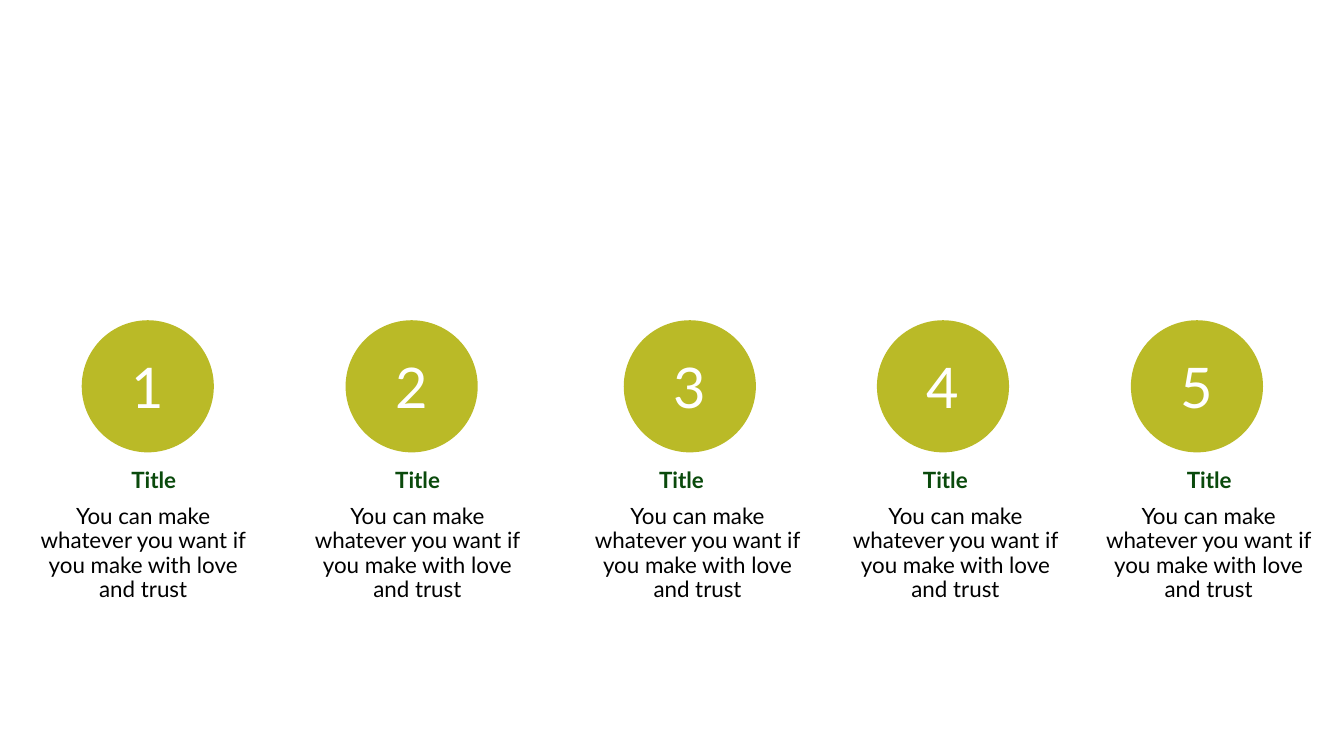
from pptx import Presentation
from pptx.dml.color import RGBColor
from pptx.enum.shapes import MSO_SHAPE as Shape
from pptx.enum.text import MSO_ANCHOR as Anchor, MSO_AUTO_SIZE as AutoSize, PP_ALIGN as Align
from pptx.util import Cm, Pt

OLIVE = RGBColor(0xBA, 0xBA, 0x27)
GREEN = RGBColor(0x0A, 0x4A, 0x0C)
BLACK = RGBColor(0, 0, 0)
WHITE = RGBColor(0xFF, 0xFF, 0xFF)
FONT = "Lato"
BODY = "You can make whatever you want if you make with love and trust"

# Left edges of each step in cm: circle, body text
STEPS = [(2.06, 0.76), (8.71, 7.67), (15.72, 14.73), (22.1, 21.23), (28.5, 27.61)]
TITLE_LEFT, TITLE_PITCH = 0.61, 6.65
ROW_TOP = 8.07


def write(shape, text, size, color, bold=False):
    """Put one centred paragraph into a shape and return it."""
    shape.text_frame.word_wrap = True
    para = shape.text_frame.paragraphs[0]
    para.text = text
    para.alignment = Align.CENTER
    font = para.font
    font.name, font.size, font.bold = FONT, Pt(size), bold
    font.color.rgb = color
    return para


def add_text(page, left, top, width, height, text, color, bold=False):
    box = page.shapes.add_textbox(Cm(left), Cm(top), Cm(width), Cm(height))
    box.text_frame.auto_size = AutoSize.SHAPE_TO_FIT_TEXT
    return write(box, text, 16, color, bold)


def add_step(page, number, top, circle_left, title_left, body_left):
    # Title and body text under the circle
    add_text(page, title_left, top + 3.56, 6.53, 0.94, "Title", GREEN, bold=True)
    body = add_text(page, body_left, top + 4.51, 5.7, 2.82, BODY, BLACK)
    body.line_spacing = Pt(17.5)

    # Numbered circle
    circle = page.shapes.add_shape(Shape.OVAL, Cm(circle_left), Cm(top), Cm(3.33), Cm(3.33))
    circle.shadow.inherit = False
    circle.fill.solid()
    circle.fill.fore_color.rgb = OLIVE
    circle.line.fill.background()
    circle.text_frame.vertical_anchor = Anchor.MIDDLE
    write(circle, str(number), 40, WHITE)


def main():
    deck = Presentation()
    deck.slide_width, deck.slide_height = Cm(33.87), Cm(19.05)
    page = deck.slides.add_slide(deck.slide_layouts[6])
    for index, (circle_left, body_left) in enumerate(STEPS):
        title_left = TITLE_LEFT + index * TITLE_PITCH
        add_step(page, index + 1, ROW_TOP, circle_left, title_left, body_left)
    deck.save("out.pptx")


if __name__ == "__main__":
    main()
